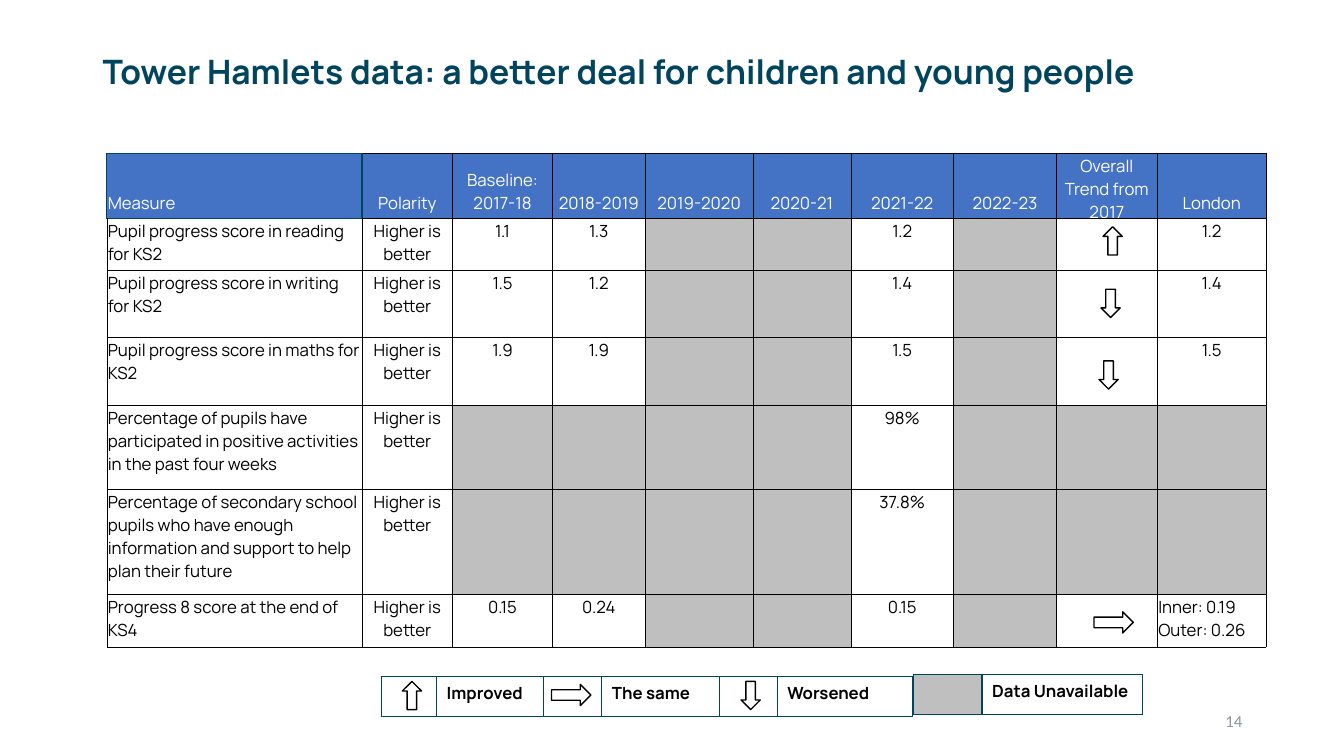
from typing import NamedTuple, Optional

from lxml import etree
from pptx import Presentation
from pptx.dml.color import RGBColor
from pptx.enum.shapes import MSO_SHAPE
from pptx.enum.text import MSO_ANCHOR, PP_ALIGN
from pptx.oxml.ns import qn
from pptx.util import Inches, Pt

TEAL, BLUE, GREY = "00445E", "4472C4", "BFBFBF"
BLACK, WHITE, SLATE = "000000", "FFFFFF", "8C949D"
UNAVAILABLE = None  # a cell that is shaded grey
SIDES = "LRTB"


class Arrow(NamedTuple):
    kind: MSO_SHAPE
    left: float
    top: float


class Border(NamedTuple):
    color: str
    points: float


class TextStyle(NamedTuple):
    size: float = 12
    color: str = BLACK
    bold: bool = False
    font: str = "Manrope"
    align: PP_ALIGN = PP_ALIGN.LEFT


THIN = Border(BLACK, 0.5)
THICK = Border(TEAL, 1)
UP, DOWN, SAME = MSO_SHAPE.UP_ARROW, MSO_SHAPE.DOWN_ARROW, MSO_SHAPE.RIGHT_ARROW

COLUMN_WIDTHS = [2.53, 0.9, 0.99, 0.92, 1.07, 0.97, 1.02, 1.02, 1, 1.08]
ROW_HEIGHTS = [0.64, 0.51, 0.67, 0.67, 0.84, 1.04, 0.52]
HEADERS = ["Measure", "Polarity", "Baseline: 2017-18", "2018-2019", "2019-2020",
           "2020-21", "2021-22", "2022-23", "Overall Trend from 2017", "London"]


class Measure(NamedTuple):
    name: str
    latest: str
    baseline: Optional[str] = UNAVAILABLE
    second_year: Optional[str] = UNAVAILABLE
    trend: Optional[str] = UNAVAILABLE
    london: Optional[str] = UNAVAILABLE

    def cells(self) -> list[Optional[str]]:
        return [self.name, "Higher is better", self.baseline, self.second_year,
                UNAVAILABLE, UNAVAILABLE, self.latest, UNAVAILABLE, self.trend, self.london]


MEASURES = [
    Measure("Pupil progress score in reading for KS2", "1.2", "1.1", "1.3", "", "1.2"),
    Measure("Pupil progress score in writing for KS2", "1.4", "1.5", "1.2", "", "1.4"),
    Measure("Pupil progress score in maths for KS2", "1.5", "1.9", "1.9", "", "1.5"),
    Measure("Percentage of pupils have participated in positive activities "
            "in the past four weeks", "98%"),
    Measure("Percentage of secondary school pupils who have enough information "
            "and support to help plan their future", "37.8%"),
    Measure("Progress 8 score at the end of KS4", "0.15", "0.15", "0.24", "",
            "Inner: 0.19\nOuter: 0.26"),
]
ARROWS = [
    Arrow(UP, 10.94, 2.25), Arrow(DOWN, 10.92, 2.87),
    Arrow(DOWN, 10.9, 3.58), Arrow(SAME, 10.85, 6.07),
    Arrow(UP, 3.99, 6.76), Arrow(SAME, 5.47, 6.79), Arrow(DOWN, 7.35, 6.76),
]


def rgb(color: str) -> RGBColor:
    return RGBColor.from_string(color)


def write(frame, text: str, style: TextStyle):
    para = frame.paragraphs[0]
    para.text = text
    para.alignment = style.align
    font = para.font
    font.name, font.size, font.bold = style.font, Pt(style.size), style.bold
    font.color.rgb = rgb(style.color)
    return para


def set_border(cell, side: str, border: Border) -> None:
    properties = cell._tc.get_or_add_tcPr()
    line = etree.Element(qn(f"a:ln{side}"), w=str(Pt(border.points)))
    fill = etree.SubElement(line, qn("a:solidFill"))
    etree.SubElement(fill, qn("a:srgbClr"), val=border.color)
    properties.append(line)


def fill_cell(cell, color: Optional[str]) -> None:
    if color:
        cell.fill.solid()
        cell.fill.fore_color.rgb = rgb(color)
    else:
        cell.fill.background()


def add_plain_table(page, left: float, top: float, widths: list[float], heights: list[float]):
    frame = page.shapes.add_table(len(heights), len(widths), Inches(left), Inches(top),
                                  Inches(sum(widths)), Inches(sum(heights)))
    table = frame.table
    table.first_row = table.horz_banding = False
    for column, width in zip(table.columns, widths):
        column.width = Inches(width)
    for row, height in zip(table.rows, heights):
        row.height = Inches(height)
    return table


def add_measures(page) -> None:
    table = add_plain_table(page, 1.06, 1.52, COLUMN_WIDTHS, ROW_HEIGHTS)
    rows = [HEADERS] + [measure.cells() for measure in MEASURES]
    for r, texts in enumerate(rows):
        for c, text in enumerate(texts):
            cell = table.cell(r, c)
            header = r == 0
            left_aligned = c == 0 or "\n" in (text or "")
            cell.margin_left = cell.margin_right = cell.margin_top = Inches(0.01)
            cell.margin_bottom = Inches(0.04)
            cell.vertical_anchor = MSO_ANCHOR.BOTTOM if header else MSO_ANCHOR.TOP
            write(cell.text_frame, text or "",
                  TextStyle(color=WHITE if header else BLACK,
                            align=PP_ALIGN.LEFT if left_aligned else PP_ALIGN.CENTER))
            # The first header cell has a thick frame, shared with its neighbours.
            thick_sides = {(0, 0): SIDES, (0, 1): "L", (1, 0): "T"}.get((r, c), "")
            for side in SIDES:
                set_border(cell, side, THICK if side in thick_sides else THIN)
            fill_cell(cell, BLUE if header else GREY if text is UNAVAILABLE else None)


def add_legend(page, left: float, top: float, widths: list[float],
               labels: list[Optional[str]]) -> None:
    table = add_plain_table(page, left, top, widths, [0.4])
    for cell, label in zip(table.rows[0].cells, labels):
        write(cell.text_frame, label or "", TextStyle(bold=True))
        for side in SIDES:
            set_border(cell, side, THICK)
        fill_cell(cell, GREY if label is UNAVAILABLE else None)


def add_arrow(page, arrow: Arrow) -> None:
    width, height = (0.39, 0.21) if arrow.kind == SAME else (0.19, 0.28)
    shape = page.shapes.add_shape(arrow.kind, Inches(arrow.left), Inches(arrow.top),
                                  Inches(width), Inches(height))
    shape.shadow.inherit = False
    shape.fill.background()
    shape.line.color.rgb = rgb(BLACK)
    shape.line.width = Pt(1)


def add_text(page, left: float, top: float, width: float, height: float,
             text: str, style: TextStyle):
    box = page.shapes.add_textbox(Inches(left), Inches(top), Inches(width), Inches(height))
    frame = box.text_frame
    frame.word_wrap = True
    frame.vertical_anchor = MSO_ANCHOR.MIDDLE
    return write(frame, text, style)


def main() -> None:
    deck = Presentation()
    deck.slide_width, deck.slide_height = Inches(13.33), Inches(7.5)
    page = deck.slides.add_slide(deck.slide_layouts[6])
    title = add_text(page, 0.92, 0.4, 11.5, 0.65,
                     "Tower Hamlets data: a better deal for children and young people",
                     TextStyle(24, TEAL, True))
    title.line_spacing = 0.9
    add_measures(page)
    add_legend(page, 3.78, 6.71, [0.55, 1.06, 0.58, 1.17, 0.57, 1.34],
               ["", "Improved", "", "The same", "", "Worsened"])
    add_legend(page, 9.06, 6.69, [0.68, 1.59], [UNAVAILABLE, "Data Unavailable"])
    for arrow in ARROWS:
        add_arrow(page, arrow)
    add_text(page, 9.42, 6.95, 3, 0.4, "14",
             TextStyle(12, SLATE, font="Calibri", align=PP_ALIGN.RIGHT))
    deck.save("out.pptx")


if __name__ == "__main__":
    main()
